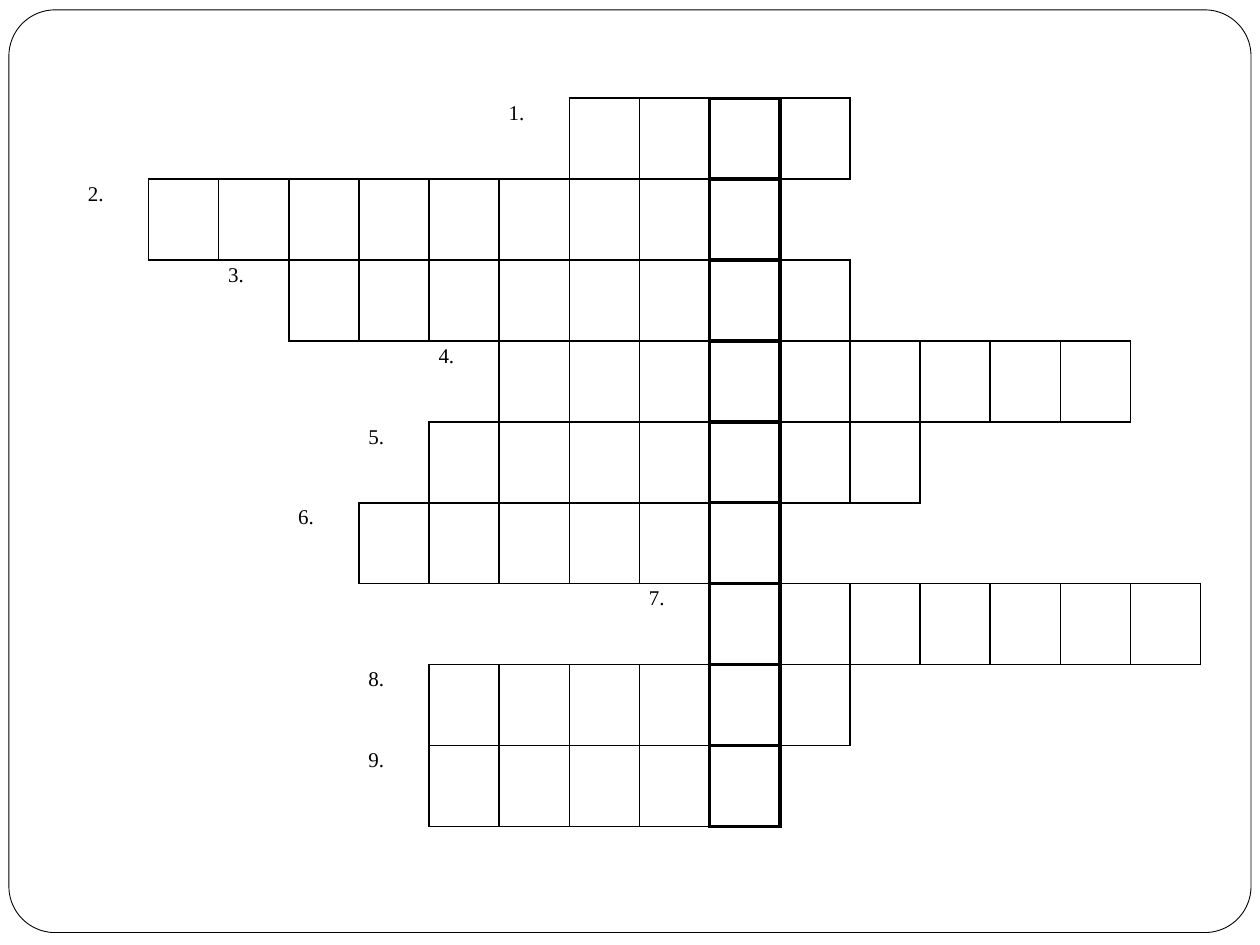
from dataclasses import dataclass

from lxml import etree
from pptx import Presentation
from pptx.dml.color import RGBColor
from pptx.enum.shapes import MSO_SHAPE
from pptx.oxml.ns import qn
from pptx.util import Cm, Pt

ROUNDED = MSO_SHAPE.ROUNDED_RECTANGLE


@dataclass(frozen=True)
class Theme:
    ink: str = "000000"
    paper: str = "FFFFFF"
    font: str = "Times New Roman"
    label_size: float = 12
    frame_line: float = 0.5
    cell_line: float = 1
    key_line: float = 2.25


# Crossword: first column and letter count of each answer
WORDS = [(7, 4), (1, 9), (3, 8), (6, 9), (5, 7), (4, 6), (9, 7), (5, 6), (5, 5)]
COLUMNS = 16
KEY_COLUMN = 9
# Border tags in schema order, with the row and column step to the neighbour
SIDES = {"a:lnL": (0, -1), "a:lnR": (0, 1), "a:lnT": (-1, 0), "a:lnB": (1, 0)}


class CrosswordSlide:
    def __init__(self, deck, theme):
        self.theme = theme
        self.page = deck.slides.add_slide(deck.slide_layouts[6])

    def frame(self, left, top, width, height, rounding):
        theme = self.theme
        shape = self.page.shapes.add_shape(ROUNDED, left, top, width, height)
        shape.adjustments[0] = rounding
        shape.shadow.inherit = False
        shape.fill.solid()
        shape.fill.fore_color.rgb = RGBColor.from_string(theme.paper)
        shape.line.color.rgb = RGBColor.from_string(theme.ink)
        shape.line.width = Pt(theme.frame_line)

    def weight(self, row, column):
        """Line weight that a square asks for around itself."""
        if not 0 <= row < len(WORDS):
            return 0
        start, length = WORDS[row]
        if not start <= column < start + length:
            return 0
        return self.theme.key_line if column == KEY_COLUMN else self.theme.cell_line

    def border(self, cell, side, points):
        properties = cell._tc.get_or_add_tcPr()
        line = etree.SubElement(properties, qn(side), w=str(Pt(points)))
        if points:
            fill = etree.SubElement(line, qn("a:solidFill"))
            etree.SubElement(fill, qn("a:srgbClr"), val=self.theme.ink)
        else:
            etree.SubElement(line, qn("a:noFill"))

    def label(self, cell, text):
        cell.text = text
        cell.margin_left = cell.margin_right = Cm(0.19)
        cell.margin_top = cell.margin_bottom = 0
        para = cell.text_frame.paragraphs[0]
        para.line_spacing = 1.15
        para.font.name = self.theme.font
        para.font.size = Pt(self.theme.label_size)
        para.font.color.rgb = RGBColor.from_string(self.theme.ink)

    def crossword(self, left, top, width, height):
        table = self.page.shapes.add_table(
            len(WORDS), COLUMNS, left, top, width, height).table
        table.first_row = table.horz_banding = False
        for row, (start, _) in enumerate(WORDS):
            for column in range(COLUMNS):
                cell = table.cell(row, column)
                own = self.weight(row, column)
                # Adjoining squares share the heavier line
                for side, (down, right) in SIDES.items():
                    neighbour = self.weight(row + down, column + right)
                    self.border(cell, side, max(own, neighbour))
                cell.fill.background()
            self.label(table.cell(row, start - 1), f"{row + 1}.")


deck = Presentation()
deck.slide_width, deck.slide_height = Cm(25.4), Cm(19.05)
slide = CrosswordSlide(deck, Theme())

# Rounded page frame
slide.frame(Cm(0.18), Cm(0.2), Cm(25.04), Cm(18.6), 0.05)

# Crossword grid with numbered rows
slide.crossword(Cm(1.58), Cm(1.98), Cm(22.63), Cm(14.68))

deck.save("out.pptx")
